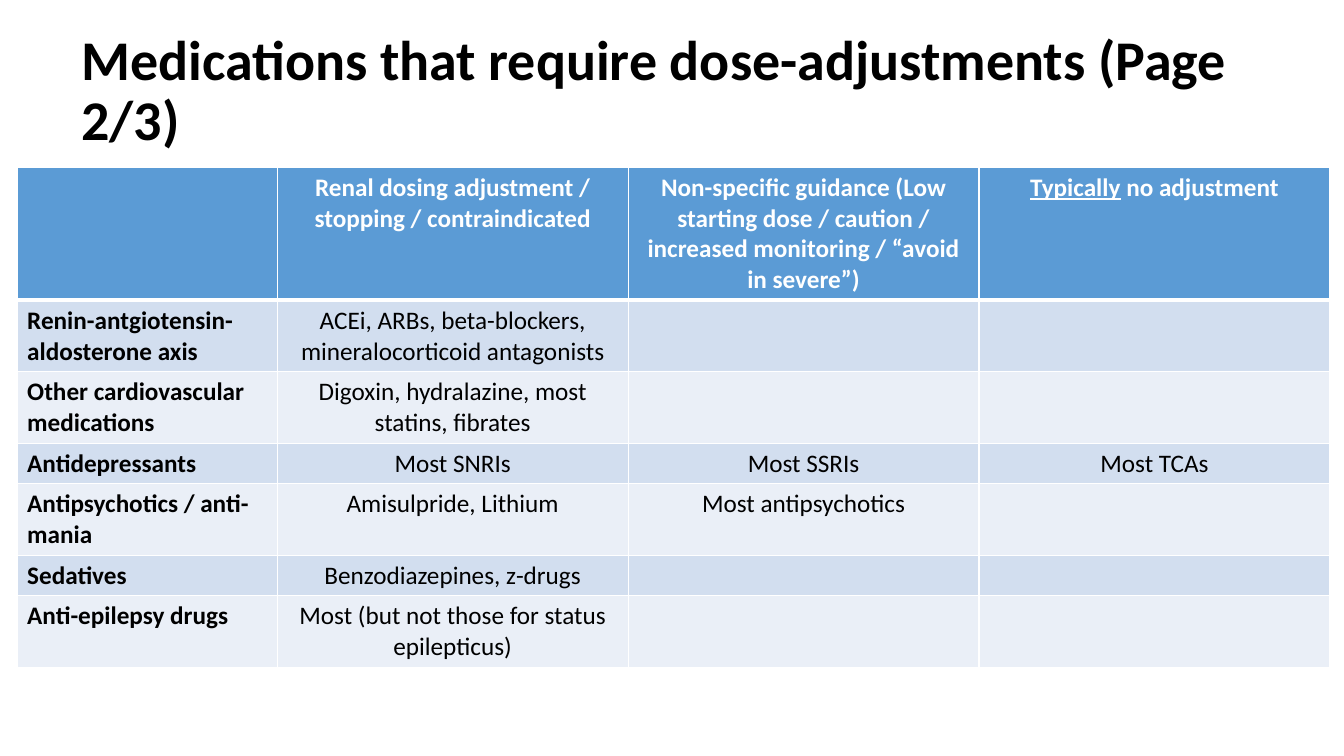
from dataclasses import dataclass

from lxml.etree import SubElement
from pptx import Presentation
from pptx.dml.color import RGBColor
from pptx.enum.text import MSO_ANCHOR as Anchor, PP_ALIGN as Align
from pptx.oxml.ns import qn
from pptx.util import Emu, Pt

EMU_PER_PX = 9144  # 100 px to the inch
BLANK_LAYOUT = 6
FONT = "Calibri"

WHITE = RGBColor(0xFF, 0xFF, 0xFF)
BLACK = RGBColor(0x00, 0x00, 0x00)
HEADER_BLUE = RGBColor(0x5B, 0x9B, 0xD5)
BANDS = (RGBColor(0xD2, 0xDE, 0xEF), RGBColor(0xEA, 0xEF, 0xF7))

TABLE_LEFT, TABLE_TOP = 17, 166
COLUMN_WIDTHS = (258, 348, 348, 348)
HEADER_HEIGHT = 132
THIN, THICK = 1, 3  # border widths in points


@dataclass(frozen=True)
class DrugGroup:
    name: str
    adjust: str
    caution: str = ""
    no_change: str = ""
    height: int = 71


HEADINGS = (
    "",
    "Renal dosing adjustment / stopping / contraindicated",
    "Non-specific guidance (Low starting dose / caution / "
    "increased monitoring / “avoid in severe”)",
    " no adjustment",
)
UNDERLINED_HEADINGS = {3: "Typically"}

DRUG_GROUPS = (
    DrugGroup("Renin-antgiotensin-aldosterone axis",
              "ACEi, ARBs, beta-blockers, mineralocorticoid antagonists"),
    DrugGroup("Other cardiovascular medications",
              "Digoxin, hydralazine, most statins, fibrates"),
    DrugGroup("Antidepressants", "Most SNRIs", "Most SSRIs", "Most TCAs", height=40),
    DrugGroup("Antipsychotics / anti-mania", "Amisulpride, Lithium",
              "Most antipsychotics"),
    DrugGroup("Sedatives", "Benzodiazepines, z-drugs", height=40),
    DrugGroup("Anti-epilepsy drugs", "Most (but not those for status epilepticus)"),
)


def px(length: int) -> Emu:
    return Emu(length * EMU_PER_PX)


def write_text(frame, text: str, *, size: int = 18, color: RGBColor = BLACK,
               bold: bool = False, align: Align = Align.LEFT,
               line_spacing: float = 1.0, underlined: str = "") -> None:
    """Fill the first paragraph, with an optional underlined opening."""
    paragraph = frame.paragraphs[0]
    paragraph.alignment = align
    paragraph.line_spacing = line_spacing
    for part, underline in ((underlined, True), (text, False)):
        if part:
            run = paragraph.add_run()
            run.text = part
            run.font.name = FONT
            run.font.size = Pt(size)
            run.font.bold = bold
            run.font.underline = underline
            run.font.color.rgb = color


def style_cell(cell, fill: RGBColor, *, top: int = THIN, bottom: int = THIN) -> None:
    """Give a cell white borders and a solid fill."""
    properties = cell._tc.get_or_add_tcPr()
    for side, width in (("L", THIN), ("R", THIN), ("T", top), ("B", bottom)):
        line = SubElement(properties, qn(f"a:ln{side}"), w=str(Pt(width)))
        solid = SubElement(line, qn("a:solidFill"))
        SubElement(solid, qn("a:srgbClr"), val=str(WHITE))
    cell.fill.solid()
    cell.fill.fore_color.rgb = fill


def add_title(slide, text: str) -> None:
    box = slide.shapes.add_textbox(px(71), px(19), px(1247), px(145))
    frame = box.text_frame
    frame.word_wrap = True
    frame.vertical_anchor = Anchor.MIDDLE
    write_text(frame, text, size=40, bold=True, line_spacing=0.9)


def add_medication_table(slide) -> None:
    heights = [HEADER_HEIGHT, *(group.height for group in DRUG_GROUPS)]
    table = slide.shapes.add_table(
        len(heights), len(COLUMN_WIDTHS), px(TABLE_LEFT), px(TABLE_TOP),
        px(sum(COLUMN_WIDTHS)), px(sum(heights))).table
    for column, width in zip(table.columns, COLUMN_WIDTHS):
        column.width = px(width)
    for row, height in zip(table.rows, heights):
        row.height = px(height)

    # Header row
    for index, heading in enumerate(HEADINGS):
        cell = table.cell(0, index)
        style_cell(cell, HEADER_BLUE, bottom=THICK)
        write_text(cell.text_frame, heading, color=WHITE, bold=True,
                   align=Align.CENTER, underlined=UNDERLINED_HEADINGS.get(index, ""))

    # One banded row for each drug group
    for row_index, group in enumerate(DRUG_GROUPS, start=1):
        texts = (group.name, group.adjust, group.caution, group.no_change)
        for index, text in enumerate(texts):
            is_name = index == 0
            cell = table.cell(row_index, index)
            style_cell(cell, BANDS[(row_index - 1) % len(BANDS)],
                       top=THICK if row_index == 1 else THIN)
            write_text(cell.text_frame, text, bold=is_name,
                       align=Align.LEFT if is_name else Align.CENTER)


def main() -> None:
    presentation = Presentation()
    presentation.slide_width = px(1333)
    presentation.slide_height = px(750)
    slide = presentation.slides.add_slide(presentation.slide_layouts[BLANK_LAYOUT])
    add_title(slide, "Medications that require dose-adjustments (Page 2/3)")
    add_medication_table(slide)
    presentation.save("out.pptx")


if __name__ == "__main__":
    main()
